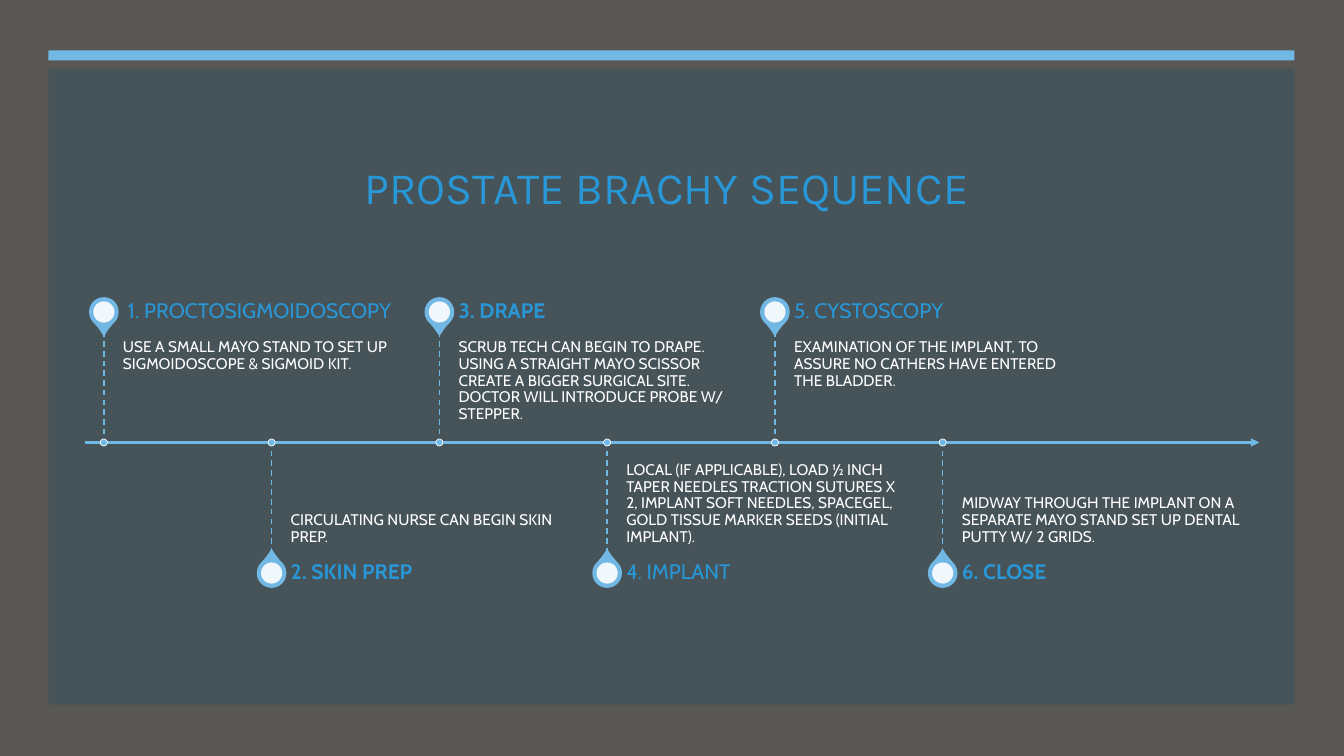
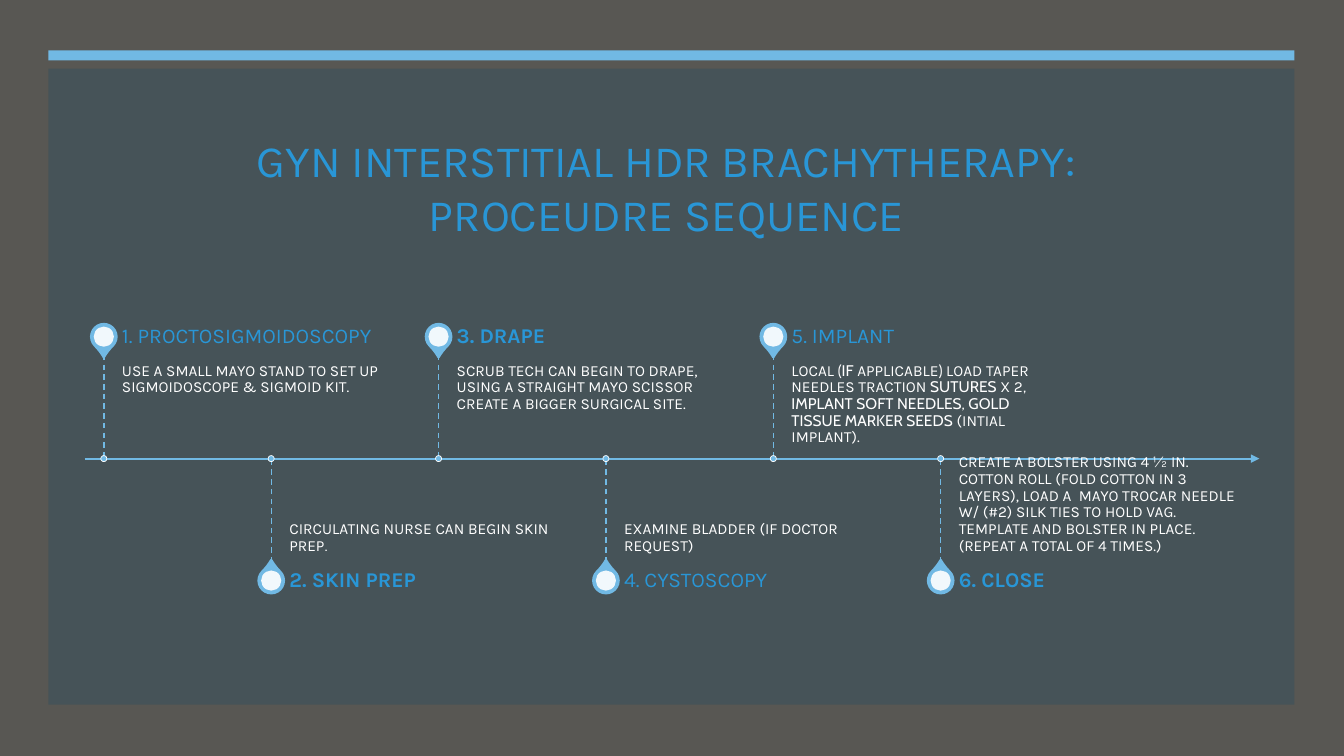
from dataclasses import dataclass
from itertools import cycle

from lxml import etree
from pptx import Presentation
from pptx import util as u
from pptx.dml.color import RGBColor
from pptx.enum import dml, shapes, text
from pptx.oxml.ns import qn

PX = 9144  # 100 px to the inch
WIDE, HIGH = 1333, 750


@dataclass(frozen=True)
class Theme:
    page: str = "585753"
    panel: str = "465359"
    sky: str = "71B9E4"
    blue: str = "2996D6"
    white: str = "FFFFFF"
    karla: str = "Karla"
    cabin: str = "Cabin"
    title: int = 32
    label: int = 15
    body: int = 11


T = Theme()

# A step is label, bold, body runs; body runs alternate between two fonts.
DECK = [
    {
        "title": ["PROSTATE BRACHY SEQUENCE "],
        "fonts": (T.cabin, T.karla),
        "axis": 439, "last": 935, "stem": 110, "head": 39,
        "pin": 27, "hole": 21, "dot": 7, "gap": 19, "wide": 277,
        "steps": [
            (" 1. PROCTOSIGMOIDOSCOPY", False,
             ["USE A SMALL MAYO STAND TO SET UP SIGMOIDOSCOPE & SIGMOID KIT."]),
            ("2. SKIN PREP", True,
             ["CIRCULATING NURSE CAN BEGIN SKIN PREP."]),
            ("3. DRAPE", True,
             ["SCRUB TECH CAN BEGIN TO DRAPE. USING A STRAIGHT MAYO SCISSOR "
              "CREATE A BIGGER SURGICAL SITE. DOCTOR WILL INTRODUCE PROBE W/ "
              "STEPPER."]),
            ("4. IMPLANT", False,
             ["LOCAL (IF APPLICABLE), LOAD ½ INCH TAPER NEEDLES TRACTION "
              "SUTURES X 2, IMPLANT SOFT NEEDLES, SPACEGEL, GOLD TISSUE "
              "MARKER SEEDS (INITIAL IMPLANT)."]),
            ("5. CYSTOSCOPY", False,
             ["EXAMINATION OF THE IMPLANT, TO ASSURE NO CATHERS HAVE ENTERED "
              "THE BLADDER."]),
            ("6. CLOSE", True,
             ["MIDWAY THROUGH THE IMPLANT ON A SEPARATE MAYO STAND SET UP "
              "DENTAL PUTTY W/ 2 GRIDS."]),
        ],
    },
    {
        "title": ["GYN INTERSTITIAL HDR BRACHYTHERAPY: ",
                  "PROCEUDRE SEQUENCE "],
        "fonts": (T.karla, T.cabin),
        "axis": 455, "last": 933, "stem": 103, "head": 36,
        "pin": 25, "hole": 20, "dot": 6, "gap": 18, "wide": 276,
        "steps": [
            ("1. PROCTOSIGMOIDOSCOPY", False,
             ["USE A SMALL MAYO STAND TO SET UP SIGMOIDOSCOPE & SIGMOID KIT."]),
            ("2. SKIN PREP", True,
             ["CIRCULATING NURSE CAN BEGIN SKIN PREP", "."]),
            ("3. DRAPE", True,
             ["SCRUB TECH CAN BEGIN TO DRAPE, USING A STRAIGHT MAYO SCISSOR "
              "CREATE A BIGGER SURGICAL SITE."]),
            ("4. CYSTOSCOPY", False,
             ["EXAMINE BLADDER (IF DOCTOR REQUEST)"]),
            ("5. IMPLANT", False,
             ["LOCAL ", "(IF ", "APPLICABLE", ") ",
              "LOAD TAPER NEEDLES TRACTION", " SUTURES", " X 2",
              ", IMPLANT SOFT NEEDLES, GOLD TISSUE MARKER SEEDS",
              " (INTIAL IMPLANT)."]),
            ("6. CLOSE", True,
             ["CREATE A BOLSTER USING 4 ½ IN. COTTON ROLL (FOLD COTTON IN 3 "
              "LAYERS), LOAD A  MAYO TROCAR NEEDLE W/ (#2) SILK TIES TO HOLD "
              "VAG. TEMPLATE AND BOLSTER IN PLACE. (REPEAT A TOTAL OF 4 "
              "TIMES.)"]),
        ],
    },
]

FIRST = 103
AXIS = (84, 1249)
TITLE = (84, 110, 1165, 150)
BAND = (48, 50, 1236, 10)
PANEL = (48, 68, 1236, 631)
KIND = shapes.MSO_SHAPE
TOP, MID, BASE = (text.MSO_ANCHOR.TOP, text.MSO_ANCHOR.MIDDLE,
                  text.MSO_ANCHOR.BOTTOM)


def emu(*nums):
    return [u.Emu(round(n * PX)) for n in nums]


def rgb(code):
    return RGBColor.from_string(code)


def add_form(slide, kind, box, fill, alpha=100, line=None):
    """Add a flat preset shape; line is (colour, points)."""
    form = slide.shapes.add_shape(kind, *emu(*box))
    form.shadow.inherit = False
    form.fill.solid()
    form.fill.fore_color.rgb = rgb(fill)
    if alpha < 100:
        tint = form.fill._xPr.find(".//" + qn("a:srgbClr"))
        etree.SubElement(tint, qn("a:alpha"), val=str(alpha * 1000))
    if line:
        form.line.color.rgb = rgb(line[0])
        form.line.width = u.Pt(line[1])
    else:
        form.line.fill.background()
    return form


def add_disc(slide, x, y, size, fill, **look):
    box = (x - size / 2, y - size / 2, size, size)
    return add_form(slide, KIND.OVAL, box, fill, **look)


def add_line(slide, start, end, width, dash=False, arrow=False):
    line = slide.shapes.add_connector(
        shapes.MSO_CONNECTOR.STRAIGHT, *emu(*start, *end))
    line.line.color.rgb = rgb(T.sky)
    line.line.width = u.Pt(width)
    if dash:
        line.line.dash_style = dml.MSO_LINE.DASH
    if arrow:
        etree.SubElement(line.line._get_or_add_ln(), qn("a:tailEnd"),
                         type="triangle")
    etree.SubElement(line._element.spPr, qn("a:effectLst"))


def add_box(slide, box, pads, anchor, space=0.9):
    """Add a wrapping text box and return its first paragraph."""
    frame = slide.shapes.add_textbox(*emu(*box)).text_frame
    frame.word_wrap = True
    frame.vertical_anchor = anchor
    (frame.margin_left, frame.margin_top,
     frame.margin_right, frame.margin_bottom) = emu(*pads)
    para = frame.paragraphs[0]
    para.line_spacing = space
    return para


def add_run(para, words, font, size, tint, bold=False):
    run = para.add_run()
    run.text = words
    run.font.name = font
    run.font.size = u.Pt(size)
    run.font.bold = bold
    run.font.color.rgb = rgb(tint)


def add_base(slide, lines):
    """Draw the page, band, panel and title that all slides share."""
    slide.background.fill.solid()
    slide.background.fill.fore_color.rgb = rgb(T.page)
    add_form(slide, KIND.RECTANGLE, BAND, T.sky)
    add_form(slide, KIND.RECTANGLE, PANEL, T.panel, alpha=97)
    para = add_box(slide, TITLE, (10, 5, 10, 5), MID, space=1.0)
    para.alignment = text.PP_ALIGN.CENTER
    for i, line in enumerate(lines):
        if i:
            para.add_line_break()
        add_run(para, line, T.karla, T.title, T.blue)


def add_step(slide, plan, x, above, step):
    """Draw one pin with its label, body, stem and dot."""
    label, bold, body = step
    axis, stem, head, pin = (plan[k] for k in ("axis", "stem", "head", "pin"))
    left, wide = x + plan["gap"], plan["wide"]
    if above:
        tip, top, turn = axis - stem, axis - stem, 135
        mid, pads, anchor = tip - head / 2, (0, 8, 8, 11), TOP
    else:
        tip, top, turn = axis + stem, axis, 315
        mid, pads, anchor = tip + head / 2, (0, 11, 0, 8), BASE

    drop = add_form(slide, KIND.TEAR, (x - pin / 2, mid - pin / 2, pin, pin),
                    T.sky, line=(T.sky, 1.75))
    drop.adjustments[0] = 1.15
    drop.rotation = turn
    add_disc(slide, x, mid, plan["hole"], T.white, alpha=90)

    para = add_box(slide, (left, top, wide, stem), pads, anchor)
    for words, font in zip(body, cycle(plan["fonts"])):
        add_run(para, words, font, T.body, T.white)
    para = add_box(slide, (left, mid - head / 2, wide, head),
                   (0, 0, 10, 0), MID)
    add_run(para, label, plan["fonts"][0], T.label, T.blue, bold)

    add_line(slide, (x, tip), (x, axis), 1, dash=True)
    add_disc(slide, x, axis, plan["dot"], T.sky, line=(T.white, 0.5))


def main():
    deck = Presentation()
    deck.slide_width, deck.slide_height = emu(WIDE, HIGH)
    for plan in DECK:
        slide = deck.slides.add_slide(deck.slide_layouts[6])
        add_base(slide, plan["title"])
        axis, steps = plan["axis"], plan["steps"]
        add_line(slide, (AXIS[0], axis), (AXIS[1], axis), 1.5, arrow=True)
        pitch = (plan["last"] - FIRST) / (len(steps) - 1)
        for i, step in enumerate(steps):
            add_step(slide, plan, FIRST + i * pitch, i % 2 == 0, step)
    deck.save("out.pptx")


if __name__ == "__main__":
    main()
